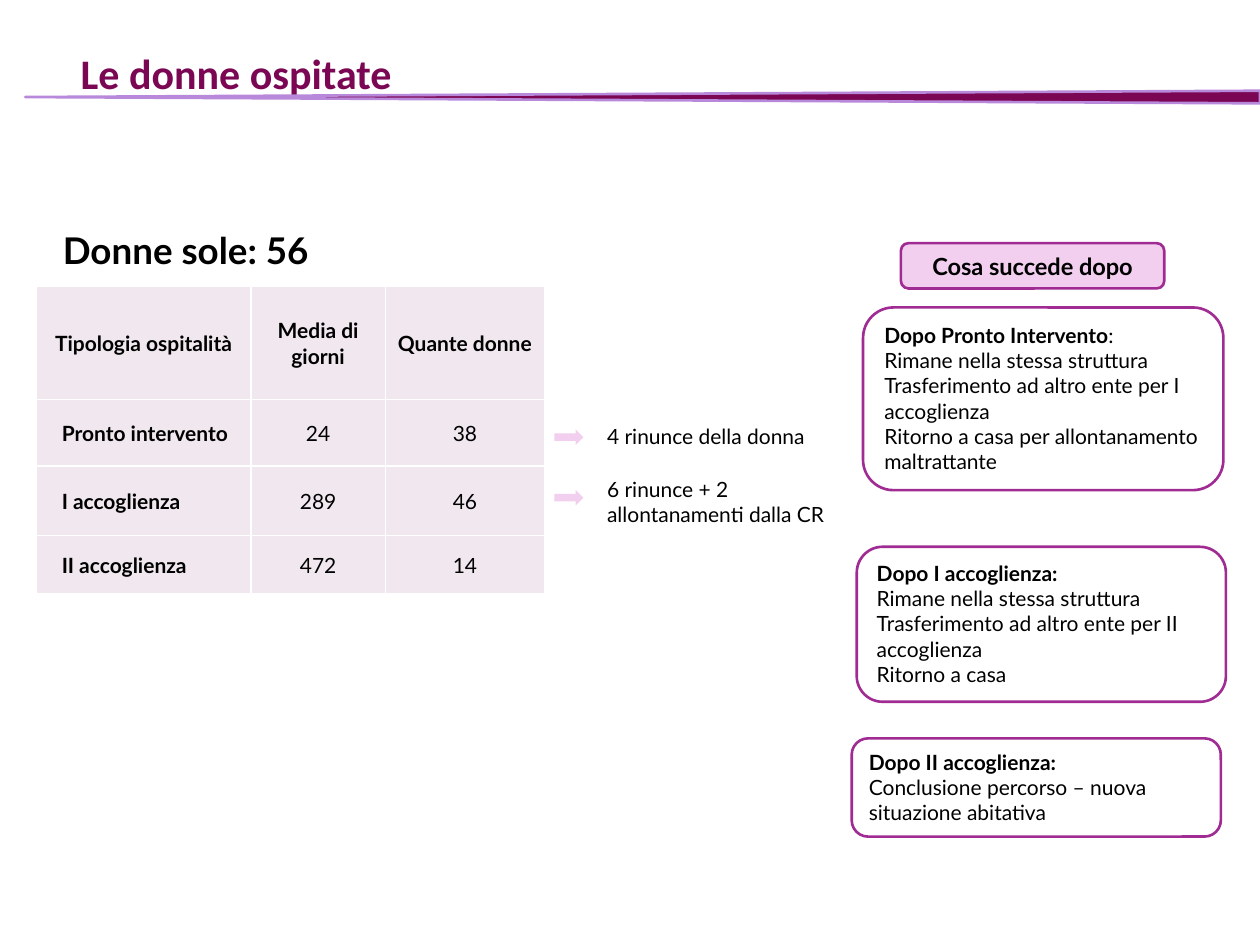
from lxml import etree
from pptx import Presentation
from pptx.dml.color import RGBColor
from pptx.enum.shapes import MSO_SHAPE
from pptx.enum.text import MSO_ANCHOR, PP_ALIGN
from pptx.oxml.ns import qn
from pptx.util import Inches, Pt

ROUNDED = MSO_SHAPE.ROUNDED_RECTANGLE
ARROW = MSO_SHAPE.RIGHT_ARROW
WEDGE = MSO_SHAPE.FLOWCHART_EXTRACT
LEFT, CENTER = PP_ALIGN.LEFT, PP_ALIGN.CENTER
TOP, MIDDLE = MSO_ANCHOR.TOP, MSO_ANCHOR.MIDDLE

COLORS = {
    "plum": "7B0754",
    "lilac": "B889DB",
    "purple": "A02B93",
    "pink": "F2CFEE",
    "cell": "F0E8EE",
    "white": "FFFFFF",
    "black": "000000",
}

HOSPITALITY = [
    ["Tipologia ospitalità", "Media di giorni", "Quante donne"],
    ["Pronto intervento", "24", "38"],
    ["I accoglienza", "289", "46"],
    ["II accoglienza", "472", "14"],
]
COLUMN_WIDTHS = [1.7, 1.07, 1.26]
ROW_HEIGHTS = [0.9, 0.53, 0.55, 0.46]

# Position and size, bold heading, plain ending of the heading, outcomes
OUTCOMES = [
    ((6.85, 2.44, 2.86, 1.45), "Dopo Pronto Intervento", ":",
     ["Rimane nella stessa struttura",
      "Trasferimento ad altro ente per I accoglienza",
      "Ritorno a casa per allontanamento maltrattante"]),
    ((6.8, 4.34, 2.93, 1.23), "Dopo I accoglienza:", "",
     ["Rimane nella stessa struttura",
      "Trasferimento ad altro ente per II accoglienza",
      "Ritorno a casa"]),
    ((6.76, 5.86, 2.93, 0.78), "Dopo II accoglienza:", "",
     ["Conclusione percorso – nuova situazione abitativa"]),
]


def color(name):
    return RGBColor.from_string(COLORS[name])


def inches(values):
    return [Inches(value) for value in values]


def style(paragraph, size=12, bold=False, align=LEFT, name="Lato", ink="black"):
    paragraph.alignment = align
    font = paragraph.font
    font.name, font.size, font.bold = name, Pt(size), bold
    font.color.rgb = color(ink)


def set_title(page, text):
    title = page.shapes.title
    title.left, title.top, title.width, title.height = inches((0.54, 0.32, 8.7, 0.56))
    title.text_frame.text = text
    title.text_frame.vertical_anchor = MIDDLE
    para = title.text_frame.paragraphs[0]
    para.line_spacing = 0.9
    style(para, 24, True, name="Calibri", ink="plum")


def add_label(page, place, text, size=12, bold=False, wrap=True):
    box = page.shapes.add_textbox(*inches(place))
    box.text_frame.word_wrap = wrap
    box.text_frame.text = text
    style(box.text_frame.paragraphs[0], size, bold)


def add_shape(page, kind, place, fill, line=None):
    shape = page.shapes.add_shape(kind, *inches(place))
    shape.shadow.inherit = False
    shape.fill.solid()
    shape.fill.fore_color.rgb = color(fill)
    if line:
        shape.line.color.rgb = color(line)
        shape.line.width = Pt(1.5)
    else:
        shape.line.fill.background()
    shape.text_frame.word_wrap = True
    shape.text_frame.vertical_anchor = TOP
    return shape


def add_outcome(page, place, heading, ending, outcomes):
    frame = add_shape(page, ROUNDED, place, "white", "purple").text_frame
    para = frame.paragraphs[0]
    style(para)
    span = para.add_run()
    span.text = heading
    span.font.bold = True
    if ending:
        para.add_run().text = ending
    for outcome in outcomes:
        para = frame.add_paragraph()
        para.text = outcome
        style(para)


def set_borders(cell):
    """Draw a thin white line on all four sides; the fill must come later."""
    properties = cell._tc.get_or_add_tcPr()
    for side in ("a:lnL", "a:lnR", "a:lnT", "a:lnB"):
        line = etree.SubElement(properties, qn(side), w=str(Pt(1)))
        fill = etree.SubElement(line, qn("a:solidFill"))
        etree.SubElement(fill, qn("a:srgbClr"), val=COLORS["white"])


def fill_cell(cell, text, is_header, is_label):
    set_borders(cell)
    cell.fill.solid()
    cell.fill.fore_color.rgb = color("cell")
    cell.vertical_anchor = MIDDLE
    row_label = is_label and not is_header
    cell.margin_left = Inches(0.2 if row_label else 0.01)
    cell.margin_right = cell.margin_top = Inches(0.01)
    cell.margin_bottom = 0
    cell.text = text
    style(cell.text_frame.paragraphs[0], bold=is_header or is_label,
          align=LEFT if row_label else CENTER)


def add_hospitality_table(page):
    place = (0.29, 2.27, sum(COLUMN_WIDTHS), sum(ROW_HEIGHTS))
    table = page.shapes.add_table(len(ROW_HEIGHTS), len(COLUMN_WIDTHS),
                                  *inches(place)).table
    for column, width in zip(table.columns, COLUMN_WIDTHS):
        column.width = Inches(width)
    for row, height in zip(table.rows, ROW_HEIGHTS):
        row.height = Inches(height)
    for r, texts in enumerate(HOSPITALITY):
        for c, text in enumerate(texts):
            fill_cell(table.cell(r, c), text, r == 0, c == 0)


def main():
    deck = Presentation()
    deck.slide_width, deck.slide_height = Inches(10), Inches(7.5)
    page = deck.slides.add_slide(deck.slide_layouts[5])

    set_title(page, "Le donne ospitate")
    add_label(page, (0.4, 1.76, 3.91, 0.45), "Donne sole: 56", 21, True)
    add_label(page, (4.72, 3.73, 2.04, 0.5), "6 rinunce + 2 allontanamenti dalla CR")
    for outcome in OUTCOMES:
        add_outcome(page, *outcome)
    add_hospitality_table(page)
    for top in (3.41, 3.89):
        add_shape(page, ARROW, (4.4, top, 0.23, 0.12), "pink")
    add_label(page, (4.72, 3.31, 1.77, 0.3), "4 rinunce della donna", wrap=False)

    header = add_shape(page, ROUNDED, (7.15, 1.93, 2.09, 0.36), "pink", "purple")
    header.text_frame.text = "Cosa succede dopo"
    style(header.text_frame.paragraphs[0], 13.5, True, CENTER)

    wedge = add_shape(page, WEDGE, (5.05, -4.13, 0.1, 9.8), "plum", "lilac")
    wedge.rotation = 270
    deck.save("out.pptx")


if __name__ == "__main__":
    main()
